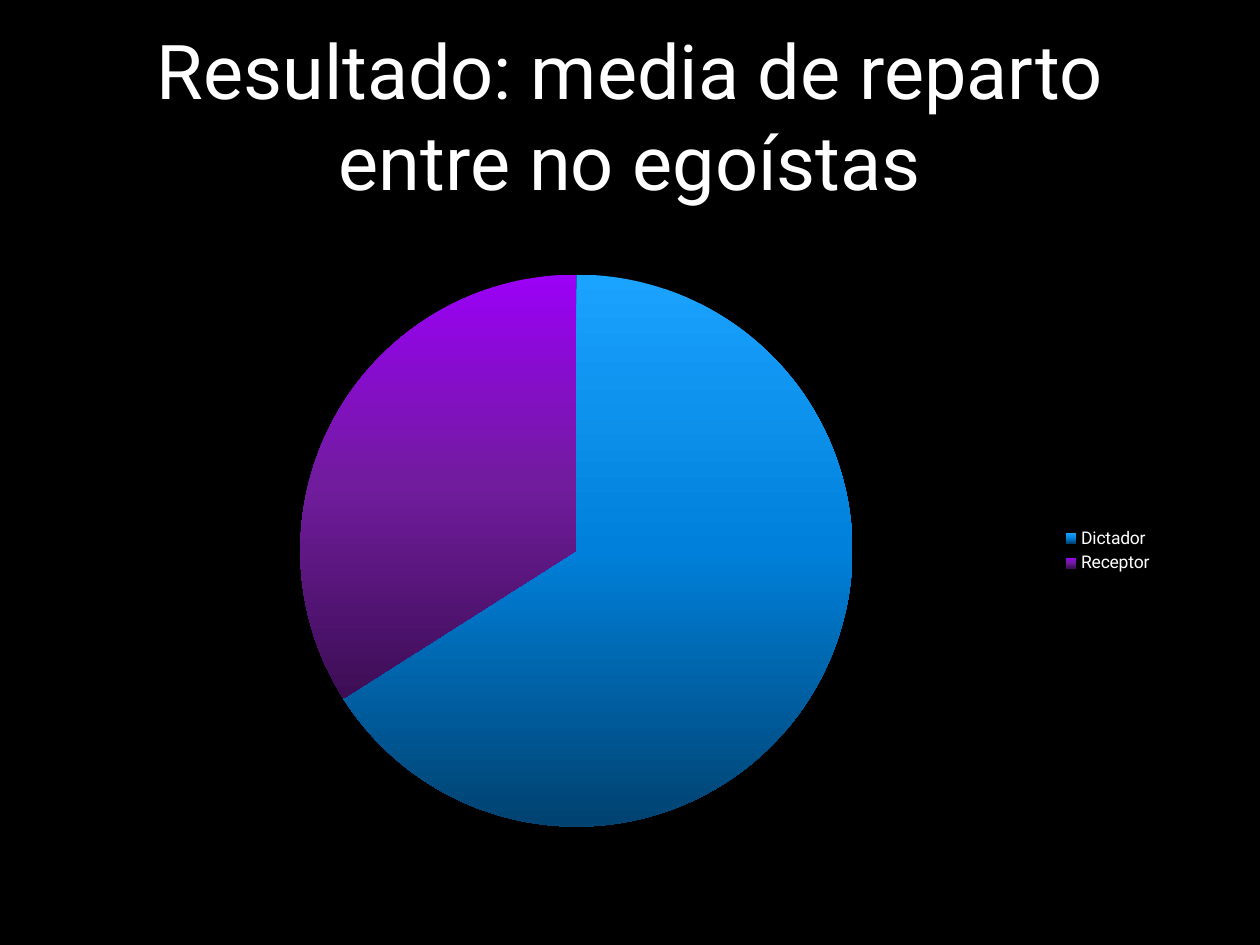
import copy

import pptx
import pptx.chart.data
import pptx.dml.color
import pptx.enum.chart
import pptx.enum.text
import pptx.oxml
import pptx.oxml.ns
import pptx.util

Cm = pptx.util.Cm
Pt = pptx.util.Pt
RGBColor = pptx.dml.color.RGBColor

BLACK = RGBColor(0x00, 0x00, 0x00)
WHITE = RGBColor(0xFF, 0xFF, 0xFF)
BLUES = (RGBColor(0x1A, 0xA3, 0xFF), RGBColor(0x00, 0x80, 0xDA), RGBColor(0x00, 0x42, 0x70))
PURPLES = (RGBColor(0x9B, 0x00, 0xF7), RGBColor(0x70, 0x1C, 0x9C), RGBColor(0x3C, 0x0E, 0x54))
FONT = "Roboto"

TITLE = "Resultado: media de reparto entre no egoístas"
SHARES = [("Dictador", 66, BLUES), ("Receptor", 34, PURPLES)]
STOPS = (0, 0.5, 1)
PIE_AREA = {"x": 0.19, "y": 0.03, "w": 0.52, "h": 0.94}

LEFT, WIDTH = Cm(1.9), Cm(21.6)


def add_title(s):
    sp = s.shapes.add_textbox(LEFT, Cm(0.33), WIDTH, Cm(3.96))
    tf = sp.text_frame
    tf.word_wrap = True
    tf.vertical_anchor = pptx.enum.text.MSO_ANCHOR.MIDDLE
    tf.text = TITLE
    p = tf.paragraphs[0]
    p.alignment = pptx.enum.text.PP_ALIGN.CENTER
    r = p.runs[0]
    r.font.name = FONT
    r.font.size = Pt(43.2)
    r.font.color.rgb = WHITE


def fill_gradient(point, colors):
    fill = point.format.fill
    fill.gradient()
    fill.gradient_angle = 270
    gs_list = next(point.format._element.iter(pptx.oxml.ns.qn("a:gsLst")))
    gs_list.append(copy.deepcopy(gs_list[-1]))
    for stop, position, color in zip(fill.gradient_stops, STOPS, colors):
        stop.position = position
        stop.color.rgb = color
    point.format.line.fill.background()


def place_pie(chart):
    ns = pptx.oxml.ns.nsdecls("c")
    sides = "".join(f'<c:{k} val="{v}"/>' for k, v in PIE_AREA.items())
    layout = pptx.oxml.parse_xml(
        f'<c:layout {ns}><c:manualLayout><c:layoutTarget val="inner"/>'
        f'<c:xMode val="edge"/><c:yMode val="edge"/>{sides}</c:manualLayout></c:layout>'
    )
    area = next(chart._chartSpace.iter(pptx.oxml.ns.qn("c:plotArea")))
    for old in area.findall(pptx.oxml.ns.qn("c:layout")):
        area.remove(old)
    area.insert(0, layout)


def add_pie(s):
    data = pptx.chart.data.CategoryChartData()
    data.categories = [name for name, _, _ in SHARES]
    data.add_series("Series 1", [value for _, value, _ in SHARES])
    chart = s.shapes.add_chart(
        pptx.enum.chart.XL_CHART_TYPE.PIE, LEFT, Cm(5.18), WIDTH, Cm(11.84), data
    ).chart
    chart.has_title = False
    chart.font.name = FONT
    chart.font.size = Pt(10)
    chart.font.color.rgb = WHITE
    chart.has_legend = True
    chart.legend.position = pptx.enum.chart.XL_LEGEND_POSITION.RIGHT
    chart.legend.include_in_layout = False
    plot = chart.plots[0]
    plot.vary_by_categories = True
    for i, (_, _, colors) in enumerate(SHARES):
        fill_gradient(plot.series[0].points[i], colors)
    place_pie(chart)


def main():
    prs = pptx.Presentation()
    prs.slide_width, prs.slide_height = Cm(25.4), Cm(19.05)
    s = prs.slides.add_slide(prs.slide_layouts[6])
    s.background.fill.solid()
    s.background.fill.fore_color.rgb = BLACK
    add_title(s)
    add_pie(s)
    prs.save("out.pptx")


if __name__ == "__main__":
    main()
